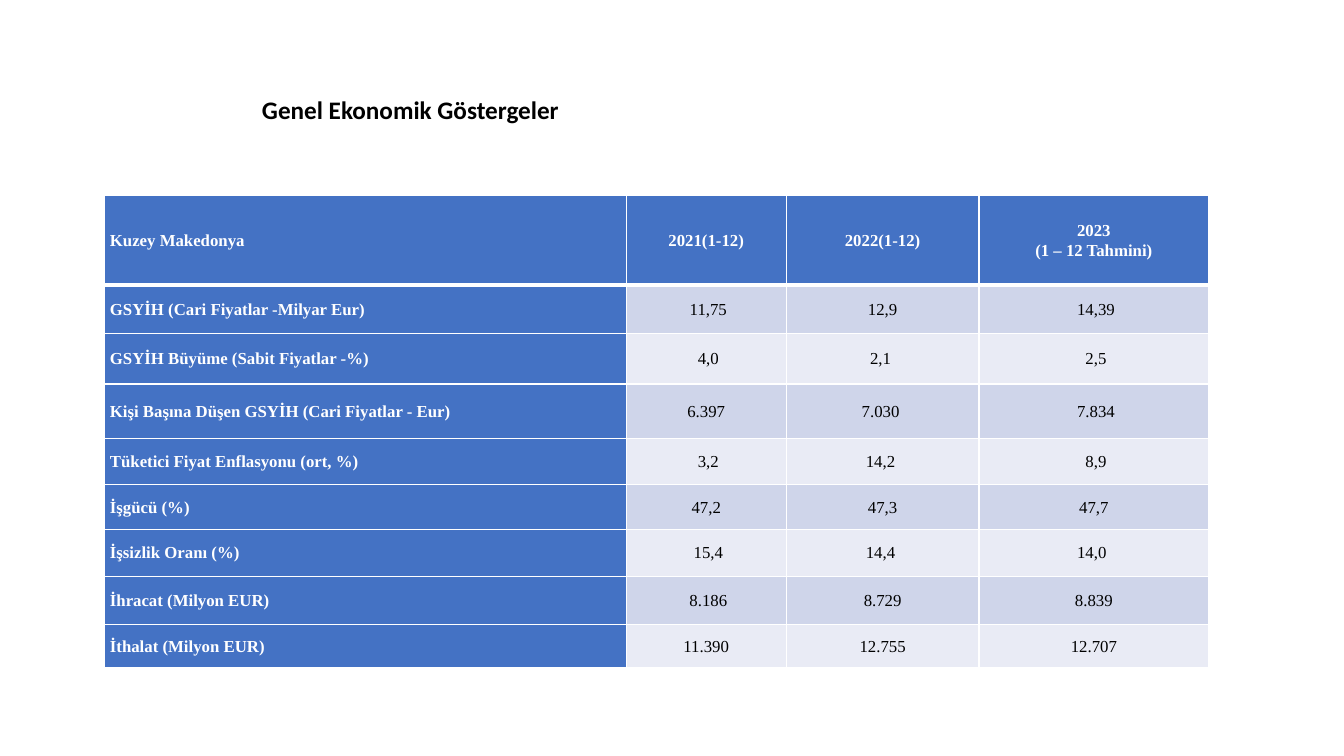
import pptx
import pptx.util
import pptx.dml.color
import pptx.enum.text
import pptx.oxml
import pptx.oxml.ns

Inches, Pt = pptx.util.Inches, pptx.util.Pt
Align = pptx.enum.text.PP_ALIGN

TITLE = "Genel Ekonomik Göstergeler"
ROWS = [
    ("Kuzey Makedonya", "2021(1-12)", "2022(1-12)", "2023\n(1 – 12 Tahmini)"),
    ("GSYİH (Cari Fiyatlar -Milyar Eur)", " 11,75", "12,9", " 14,39"),
    ("GSYİH Büyüme (Sabit Fiyatlar -%)", " 4,0", "2,1 ", " 2,5"),
    ("Kişi Başına Düşen GSYİH (Cari Fiyatlar - Eur)", "6.397", "7.030 ", " 7.834"),
    ("Tüketici Fiyat Enflasyonu (ort, %)", " 3,2", "14,2 ", " 8,9"),
    ("İşgücü (%)", "47,2", "47,3", "47,7"),
    ("İşsizlik Oranı (%)", " 15,4", "14,4 ", "14,0 "),
    ("İhracat (Milyon EUR)", " 8.186", "8.729", "8.839"),
    ("İthalat (Milyon EUR)", "11.390", "12.755", "12.707"),
]
WIDTHS = (5.17, 1.59, 1.91, 2.28)
HEIGHTS = (0.89, 0.48, 0.5, 0.54, 0.46, 0.44, 0.47, 0.48, 0.42)
THEME = {
    "head": "4472C4", "bands": ("E9EBF5", "CFD5EA"),
    "light": "FFFFFF", "dark": "000000",
    "title font": "Calibri", "title size": 18,
    "cell font": "Times New Roman", "cell size": 12,
    "rule": 1, "head rule": 3, "leading": 1.05,
}


def color(code):
    return pptx.dml.color.RGBColor.from_string(code)


def write(para, text, font, size, tint, bold):
    run = para.add_run()
    run.text = text
    run.font.name = font
    run.font.size = Pt(size)
    run.font.bold = bold
    run.font.color.rgb = color(tint)


def border(cell, row):
    """Draw the four cell edges, thicker where the header meets the body."""
    props = cell._tc.get_or_add_tcPr()
    thick = {(0, "B"), (1, "T")}
    for spot, side in enumerate("LRTB"):
        width = THEME["head rule" if (row, side) in thick else "rule"]
        props.insert(spot, pptx.oxml.parse_xml(
            f'<a:ln{side} {pptx.oxml.ns.nsdecls("a")} w="{Pt(width)}">'
            f'<a:solidFill><a:srgbClr val="{THEME["light"]}"/></a:solidFill>'
            f'</a:ln{side}>'))


def fill_cell(cell, text, row, col):
    head = row == 0 or col == 0
    cell.fill.solid()
    cell.fill.fore_color.rgb = color(THEME["head"] if head else THEME["bands"][row % 2])
    cell.margin_left = cell.margin_right = Inches(0.05)
    cell.margin_top = cell.margin_bottom = 0
    cell.vertical_anchor = pptx.enum.text.MSO_ANCHOR.MIDDLE
    border(cell, row)
    frame = cell.text_frame
    for spot, line in enumerate(text.split("\n")):
        para = frame.add_paragraph() if spot else frame.paragraphs[0]
        para.alignment = Align.CENTER if col else Align.LEFT
        para.line_spacing = THEME["leading"]
        write(para, line, THEME["cell font"], THEME["cell size"],
              THEME["light" if head else "dark"], head)


def add_title(slide):
    box = slide.shapes.add_textbox(Inches(2.5), Inches(0.89), Inches(5.21), Inches(0.4))
    frame = box.text_frame
    frame.word_wrap = True
    frame.auto_size = pptx.enum.text.MSO_AUTO_SIZE.SHAPE_TO_FIT_TEXT
    write(frame.paragraphs[0], TITLE, THEME["title font"], THEME["title size"],
          THEME["dark"], True)


def add_grid(slide):
    table = slide.shapes.add_table(
        len(ROWS), len(WIDTHS), Inches(1.04), Inches(1.94),
        Inches(sum(WIDTHS)), Inches(sum(HEIGHTS))).table
    table.first_col = True
    for column, width in zip(table.columns, WIDTHS):
        column.width = Inches(width)
    for row, (texts, height) in enumerate(zip(ROWS, HEIGHTS)):
        table.rows[row].height = Inches(height)
        for col, text in enumerate(texts):
            fill_cell(table.cell(row, col), text, row, col)


def main():
    deck = pptx.Presentation()
    deck.slide_width, deck.slide_height = Inches(13.33), Inches(7.5)
    slide = deck.slides.add_slide(deck.slide_layouts[6])
    add_title(slide)
    add_grid(slide)
    deck.save("out.pptx")


if __name__ == "__main__":
    main()
